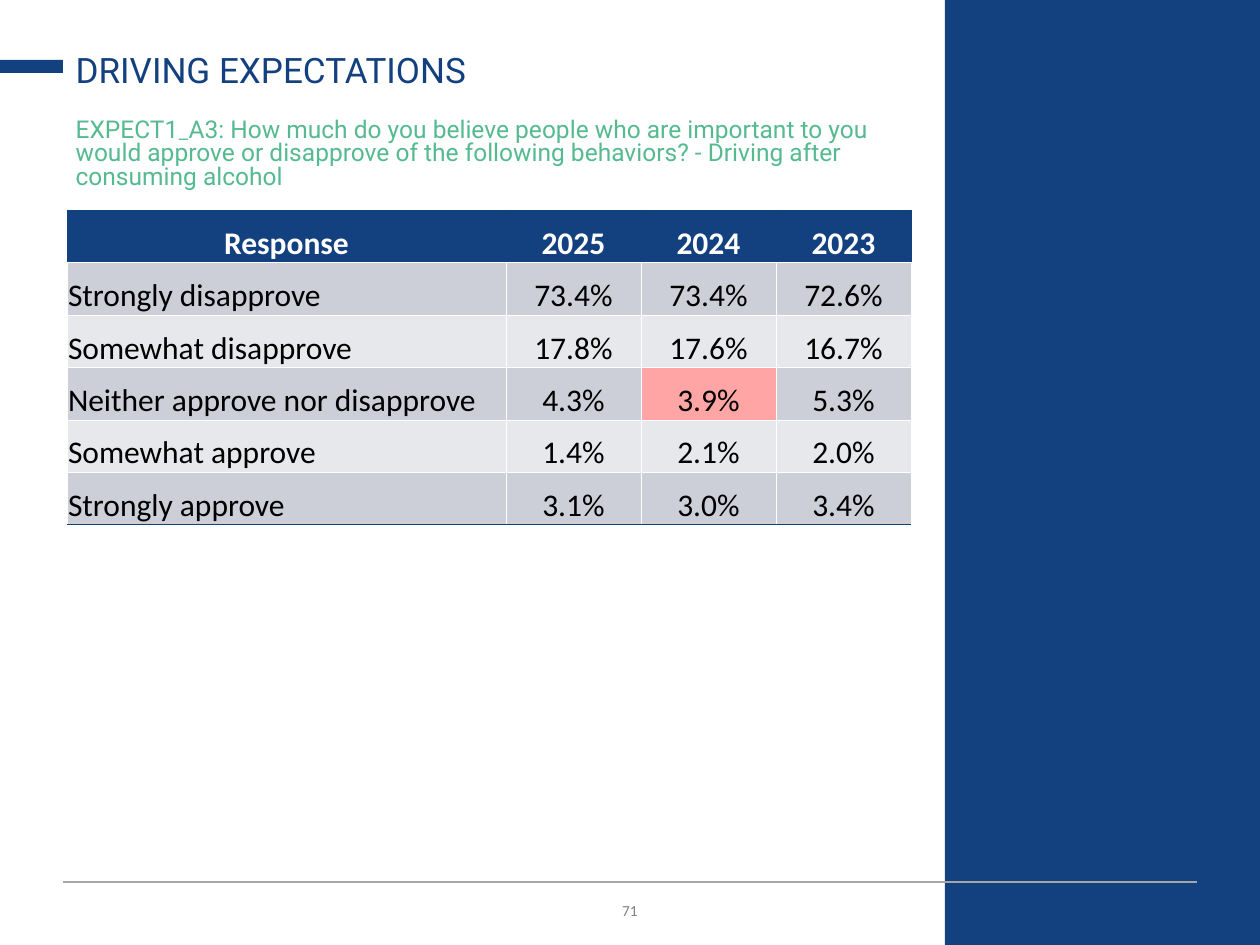
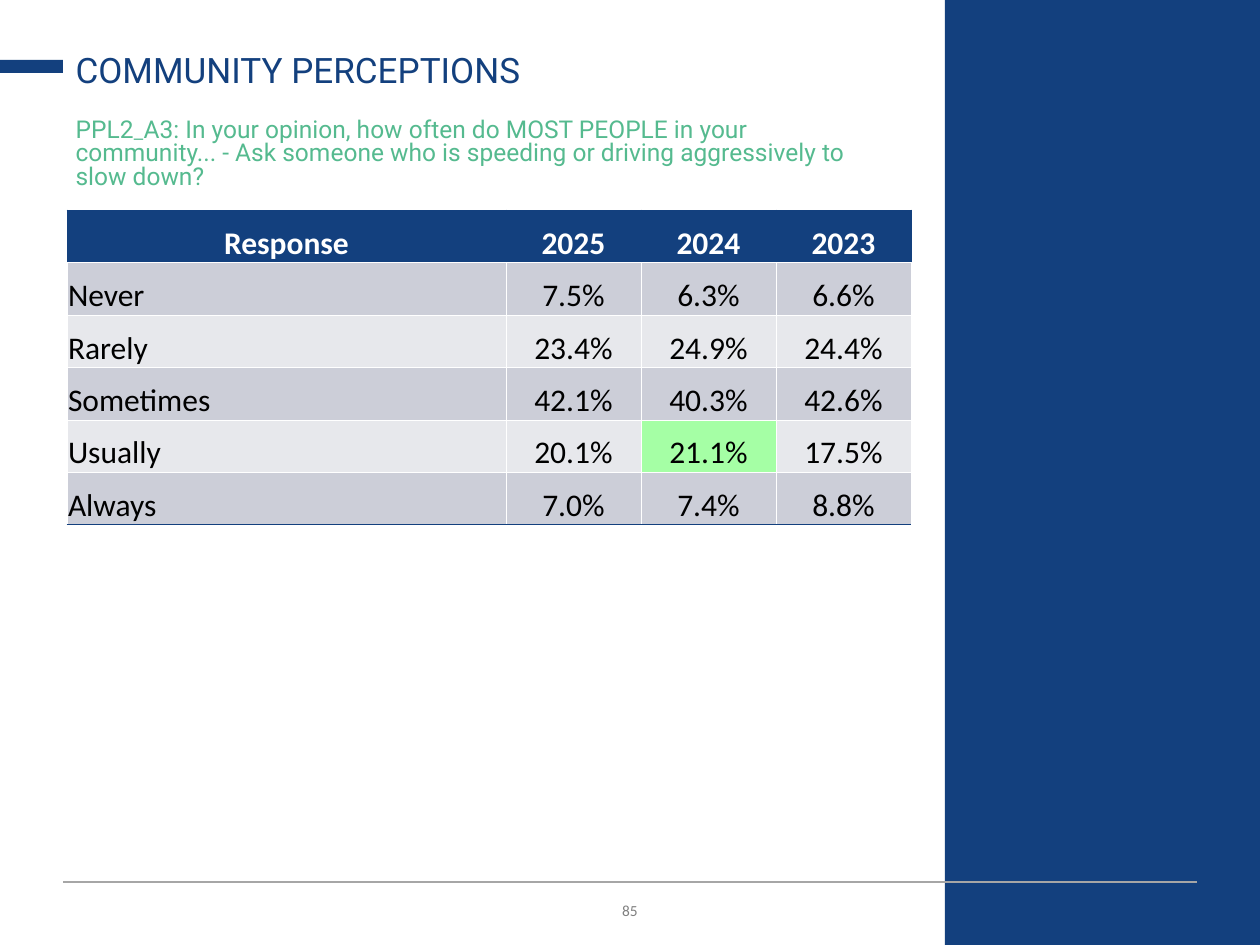
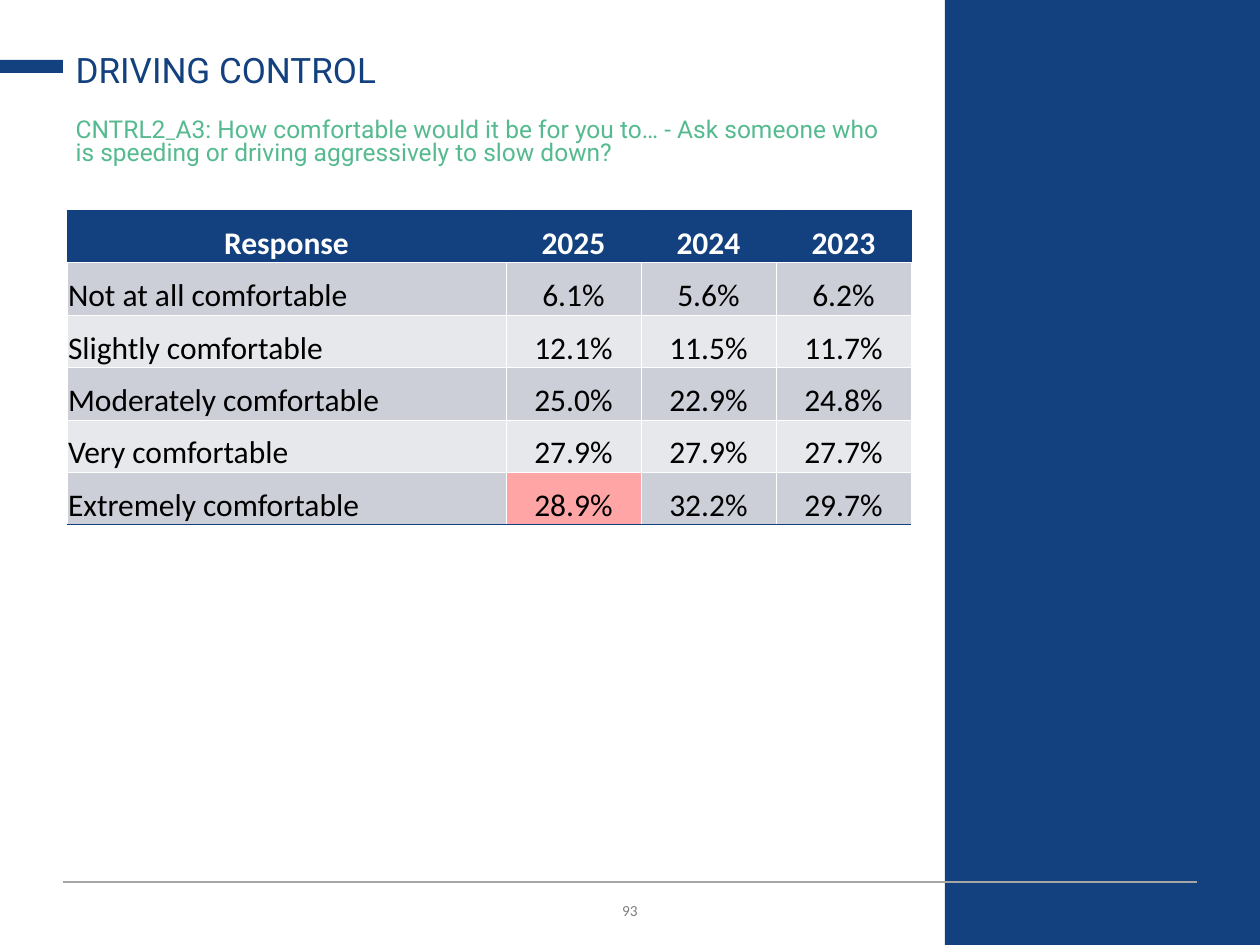
from lxml import etree
from pptx import Presentation
from pptx.dml.color import RGBColor
from pptx.enum.shapes import MSO_CONNECTOR, MSO_SHAPE
from pptx.enum.text import MSO_ANCHOR, MSO_AUTO_SIZE, PP_ALIGN
from pptx.oxml.ns import qn
from pptx.util import Pt

RECT = MSO_SHAPE.RECTANGLE
STRAIGHT = MSO_CONNECTOR.STRAIGHT
TOP, MIDDLE, BOTTOM = MSO_ANCHOR.TOP, MSO_ANCHOR.MIDDLE, MSO_ANCHOR.BOTTOM
LEFT, CENTER = PP_ALIGN.LEFT, PP_ALIGN.CENTER
NO_FIT = MSO_AUTO_SIZE.NONE

NAVY = RGBColor(0x13, 0x40, 0x7E)
GREEN = RGBColor(0x55, 0xBA, 0x8F)
WHITE = RGBColor(0xFF, 0xFF, 0xFF)
BLACK = RGBColor(0x00, 0x00, 0x00)
GREY = RGBColor(0x80, 0x80, 0x80)
RULE_GREY = RGBColor(0xA6, 0xA6, 0xA6)
BAND_DARK = RGBColor(0xCC, 0xCE, 0xD8)
BAND_LIGHT = RGBColor(0xE7, 0xE8, 0xEC)
LOWER = RGBColor(0xFF, 0xA5, 0xA5)
HIGHER = RGBColor(0xA5, 0xFF, 0xA5)

HEADER = ("Response", "2025", "2024", "2023")
SLIDES = [
    {
        "page": "71",
        "title": "DRIVING EXPECTATIONS",
        "code": "EXPECT1",
        "question": "A3: How much do you believe people who are important to you would "
                    "approve or disapprove of the following behaviors? - Driving after "
                    "consuming alcohol",
        "rows": [
            ("Strongly disapprove", "73.4%", "73.4%", "72.6%"),
            ("Somewhat disapprove", "17.8%", "17.6%", "16.7%"),
            ("Neither approve nor disapprove", "4.3%", "3.9%", "5.3%"),
            ("Somewhat approve", "1.4%", "2.1%", "2.0%"),
            ("Strongly approve", "3.1%", "3.0%", "3.4%"),
        ],
        "marked": {(3, 2): LOWER},
    },
    {
        "page": "85",
        "title": "COMMUNITY PERCEPTIONS",
        "code": "PPL2",
        "question": "A3: In your opinion, how often do MOST PEOPLE in your community... - "
                    "Ask someone who is speeding or driving aggressively to slow down?",
        "rows": [
            ("Never", "7.5%", "6.3%", "6.6%"),
            ("Rarely", "23.4%", "24.9%", "24.4%"),
            ("Sometimes", "42.1%", "40.3%", "42.6%"),
            ("Usually", "20.1%", "21.1%", "17.5%"),
            ("Always", "7.0%", "7.4%", "8.8%"),
        ],
        "marked": {(4, 2): HIGHER},
    },
    {
        "page": "93",
        "title": "DRIVING CONTROL",
        "code": "CNTRL2",
        "question": "A3: How comfortable would it be for you to… - Ask someone who is "
                    "speeding or driving aggressively to slow down?",
        "rows": [
            ("Not at all comfortable", "6.1%", "5.6%", "6.2%"),
            ("Slightly comfortable", "12.1%", "11.5%", "11.7%"),
            ("Moderately comfortable", "25.0%", "22.9%", "24.8%"),
            ("Very comfortable", "27.9%", "27.9%", "27.7%"),
            ("Extremely comfortable", "28.9%", "32.2%", "29.7%"),
        ],
        "marked": {(5, 1): LOWER},
    },
]

WIDTH, HEIGHT = 1260, 945
SIDE_PANEL = (945, 0, 315, 945)
TITLE_BAR = (0, 60, 63, 13)
FOOTER_RULE = (63, 882, 1197, 882)
PAGE_BOX = (63, 890, 1134, 38)
TITLE_BOX = (63, 37, 844, 60)
QUESTION_BOX = (63, 113, 844, 84)
TABLE_LEFT, TABLE_TOP, TABLE_HEIGHT = 67, 210, 315
COLUMNS = (439, 135, 135, 135)


def px(n):
    return round(n * 914400 / 126)


def emu(box):
    return [px(n) for n in box]


def add_run(p, text, font, size, color, bold=False):
    r = p.add_run()
    r.text = text
    r.font.name = font
    r.font.size = Pt(size)
    r.font.bold = bold
    r.font.color.rgb = color
    return r


def set_frame(sp, box, anchor, align, spacing=1.0):
    sp.left, sp.top, sp.width, sp.height = emu(box)
    tf = sp.text_frame
    tf.word_wrap = True
    tf.auto_size = NO_FIT
    tf.vertical_anchor = anchor
    p = tf.paragraphs[0]
    p.alignment = align
    p.line_spacing = spacing
    p.space_before = Pt(0)
    return p


def add_block(s, box):
    sp = s.shapes.add_shape(RECT, *emu(box))
    sp.shadow.inherit = False
    sp.fill.solid()
    sp.fill.fore_color.rgb = NAVY
    sp.line.fill.background()


def add_frame(s, page):
    p = set_frame(s.shapes.add_textbox(*emu(PAGE_BOX)), PAGE_BOX, MIDDLE, CENTER)
    r = add_run(p, page, "Calibri", 11, GREY)
    r.font._element.set("cap", "small")
    add_block(s, SIDE_PANEL)
    rule = s.shapes.add_connector(STRAIGHT, *emu(FOOTER_RULE))
    rule.line.color.rgb = RULE_GREY
    rule.line.width = Pt(0.75)
    etree.SubElement(rule._element.spPr, qn("a:effectLst"))
    add_block(s, TITLE_BAR)


def add_heading(s, title, code, question):
    p = set_frame(s.shapes.title, TITLE_BOX, BOTTOM, LEFT, 0.9)
    add_run(p, title, "Roboto", 20, NAVY)
    p = set_frame(s.placeholders[1], QUESTION_BOX, TOP, LEFT, 0.8)
    pPr = p._p.get_or_add_pPr()
    pPr.set("marL", "0")
    pPr.set("indent", "0")
    etree.SubElement(pPr, qn("a:buNone"))
    for text, font in ((code, "Roboto"), ("_", "League Spartan"), (question, "Roboto")):
        add_run(p, text, font, 14, GREEN)


def set_borders(cell, colors):
    tcPr = cell._tc.get_or_add_tcPr()
    for tag, color in zip(("a:lnL", "a:lnR", "a:lnT", "a:lnB"), colors):
        ln = etree.SubElement(tcPr, qn(tag), w=str(Pt(0.5)))
        fill = etree.SubElement(ln, qn("a:solidFill"))
        etree.SubElement(fill, qn("a:srgbClr"), val=str(color))


def add_responses(s, rows, marked):
    grid = [HEADER, *rows]
    last = len(grid) - 1
    size = emu((TABLE_LEFT, TABLE_TOP, sum(COLUMNS), TABLE_HEIGHT))
    table = s.shapes.add_table(len(grid), len(COLUMNS), *size).table
    table.horz_banding = False
    for column, width in zip(table.columns, COLUMNS):
        column.width = px(width)
    for i, values in enumerate(grid):
        table.rows[i].height = px(TABLE_HEIGHT / len(grid))
        head = i == 0
        band = NAVY if head else BAND_DARK if i % 2 else BAND_LIGHT
        side = NAVY if head else WHITE
        for j, text in enumerate(values):
            cell = table.cell(i, j)
            cell.margin_left = cell.margin_right = cell.margin_top = px(1)
            cell.margin_bottom = 0
            cell.vertical_anchor = BOTTOM
            set_borders(cell, (side, side, side, NAVY if i == last else WHITE))
            cell.fill.solid()
            cell.fill.fore_color.rgb = marked.get((i, j), band)
            p = cell.text_frame.paragraphs[0]
            p.alignment = CENTER if head or j else LEFT
            add_run(p, text, "Calibri", 18, WHITE if head else BLACK, head)


def main():
    prs = Presentation()
    prs.slide_width, prs.slide_height = px(WIDTH), px(HEIGHT)
    for item in SLIDES:
        s = prs.slides.add_slide(prs.slide_layouts[1])
        add_frame(s, item["page"])
        add_heading(s, item["title"], item["code"], item["question"])
        add_responses(s, item["rows"], item["marked"])
    prs.save("out.pptx")


if __name__ == "__main__":
    main()
